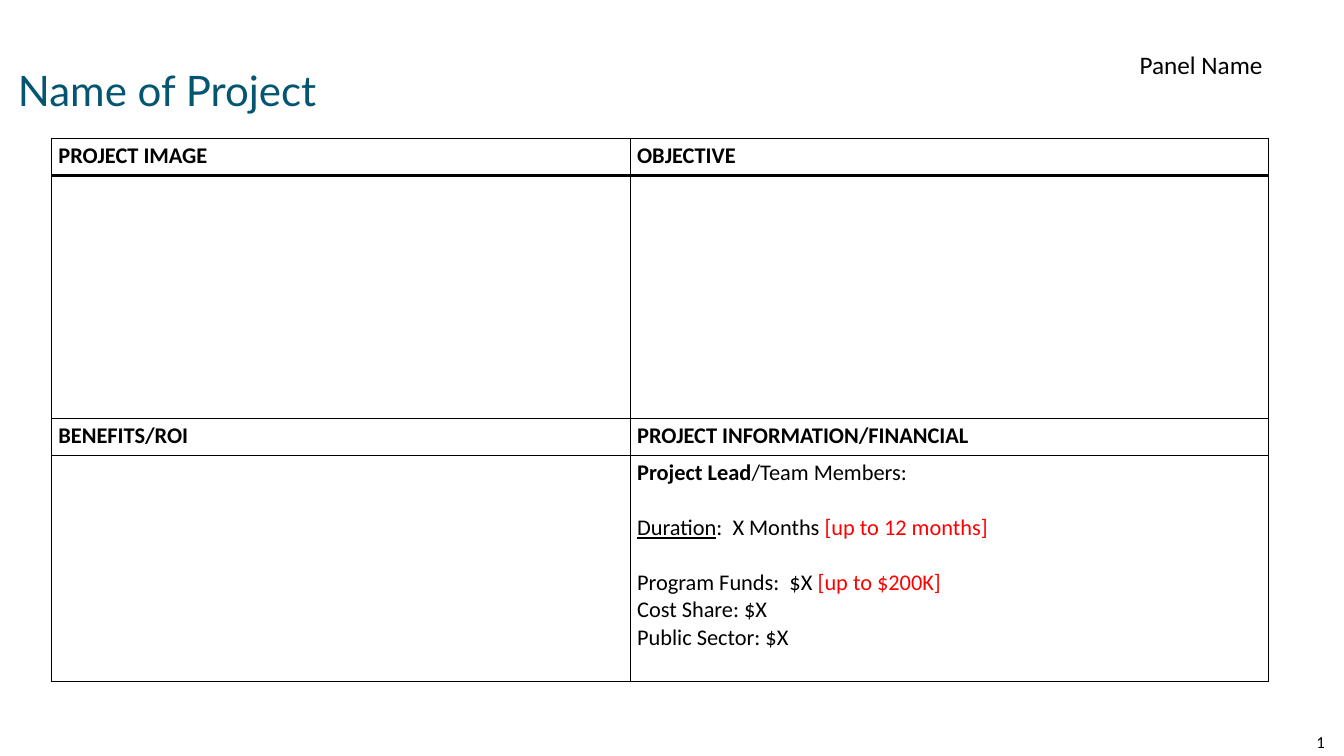
from dataclasses import dataclass

from lxml import etree
from pptx import Presentation
from pptx.dml.color import RGBColor
from pptx.enum.text import MSO_ANCHOR, PP_ALIGN
from pptx.oxml.ns import qn
from pptx.util import Inches, Pt

LEFT, RIGHT = PP_ALIGN.LEFT, PP_ALIGN.RIGHT
TOP, MIDDLE = MSO_ANCHOR.TOP, MSO_ANCHOR.MIDDLE


@dataclass(frozen=True)
class Theme:
    title_font: str = "Lato"
    body_font: str = "Calibri"
    title_size: float = 30
    panel_size: float = 18
    body_size: float = 16
    number_size: float = 12
    section_gap: float = 19.5
    thin: float = 1
    thick: float = 2
    title: str = "045571"
    text: str = "000000"
    limit: str = "FF0000"


THEME = Theme()
COLUMNS = (5.74, 6.33)
ROWS = (0.37, 2.41, 0.37, 2.24)
HEADINGS = {
    (0, 0): "PROJECT IMAGE",
    (0, 1): "OBJECTIVE",
    (2, 0): "BENEFITS/ROI",
    (2, 1): "PROJECT INFORMATION/FINANCIAL",
}
# Each line: whether it opens a new section, then its runs as (text, style)
PROJECT_INFO = (
    (False, (("Project Lead", "bold"), ("/Team Members:", ""))),
    (True, (("Duration", "underline"), (":  X Months ", ""), ("[up to 12 months]", "limit"))),
    (True, (("Program Funds:  $X ", ""), ("[up to $200K]", "limit"))),
    (False, (("Cost Share: $X", ""),)),
    (False, (("Public Sector: $X", ""),)),
)


def add_run(p, text, size, color=THEME.text, font=THEME.body_font, style=""):
    r = p.add_run()
    r.text = text
    r.font.name = font
    r.font.size = Pt(size)
    r.font.color.rgb = RGBColor.from_string(color)
    r.font.bold = style == "bold"
    r.font.underline = style == "underline"


def add_label(s, box, text, size, align=LEFT, anchor=TOP, spacing=1.0, **look):
    tb = s.shapes.add_textbox(*map(Inches, box))
    tf = tb.text_frame
    tf.word_wrap = True
    tf.vertical_anchor = anchor
    p = tf.paragraphs[0]
    p.alignment = align
    p.line_spacing = spacing
    add_run(p, text, size, **look)


def set_borders(cell, **widths):
    """Draw the cell's edges; widths maps L, R, T and B to points."""
    props = cell._tc.get_or_add_tcPr()
    for i, side in enumerate("LRTB"):
        ln = etree.Element(qn(f"a:ln{side}"), w=str(Pt(widths.get(side, THEME.thin))))
        fill = etree.SubElement(ln, qn("a:solidFill"))
        etree.SubElement(fill, qn("a:srgbClr"), val=THEME.text)
        props.insert(i, ln)


def fill_project_info(tf):
    for i, (new_section, runs) in enumerate(PROJECT_INFO):
        p = tf.add_paragraph() if i else tf.paragraphs[0]
        if new_section:
            p.space_before = Pt(THEME.section_gap)
        for text, style in runs:
            color = THEME.limit if style == "limit" else THEME.text
            add_run(p, text, THEME.body_size, color, style=style)


def add_project_table(s, left, top):
    frame = s.shapes.add_table(
        len(ROWS), len(COLUMNS), Inches(left), Inches(top),
        Inches(sum(COLUMNS)), Inches(sum(ROWS)),
    )
    table = frame.table
    table.first_row = table.horz_banding = False
    for column, width in zip(table.columns, COLUMNS):
        column.width = Inches(width)
    for i, height in enumerate(ROWS):
        table.rows[i].height = Inches(height)
        for j in range(len(COLUMNS)):
            cell = table.cell(i, j)
            cell.fill.background()
            cell.margin_left = cell.margin_right = Inches(0.07)
            cell.margin_top = cell.margin_bottom = Inches(0.04)
            set_borders(cell, **{0: {"B": THEME.thick}, 1: {"T": THEME.thick}}.get(i, {}))
            if (i, j) in HEADINGS:
                p = cell.text_frame.paragraphs[0]
                add_run(p, HEADINGS[i, j], THEME.body_size, style="bold")
    fill_project_info(table.cell(3, 1).text_frame)


def build_project_slide(prs):
    s = prs.slides.add_slide(prs.slide_layouts[6])
    add_label(s, (0.08, 0.65, 11.5, 1.06), "Name of Project", THEME.title_size,
              spacing=0.9, color=THEME.title, font=THEME.title_font)
    add_label(s, (10.24, 7.16, 3, 0.4), "1", THEME.number_size, RIGHT, MIDDLE)
    add_project_table(s, 0.51, 1.37)
    add_label(s, (8.07, 0.44, 4.55, 0.4), "Panel Name", THEME.panel_size, RIGHT)


def main():
    prs = Presentation()
    prs.slide_width, prs.slide_height = Inches(13.33), Inches(7.5)
    build_project_slide(prs)
    prs.save("out.pptx")


if __name__ == "__main__":
    main()
